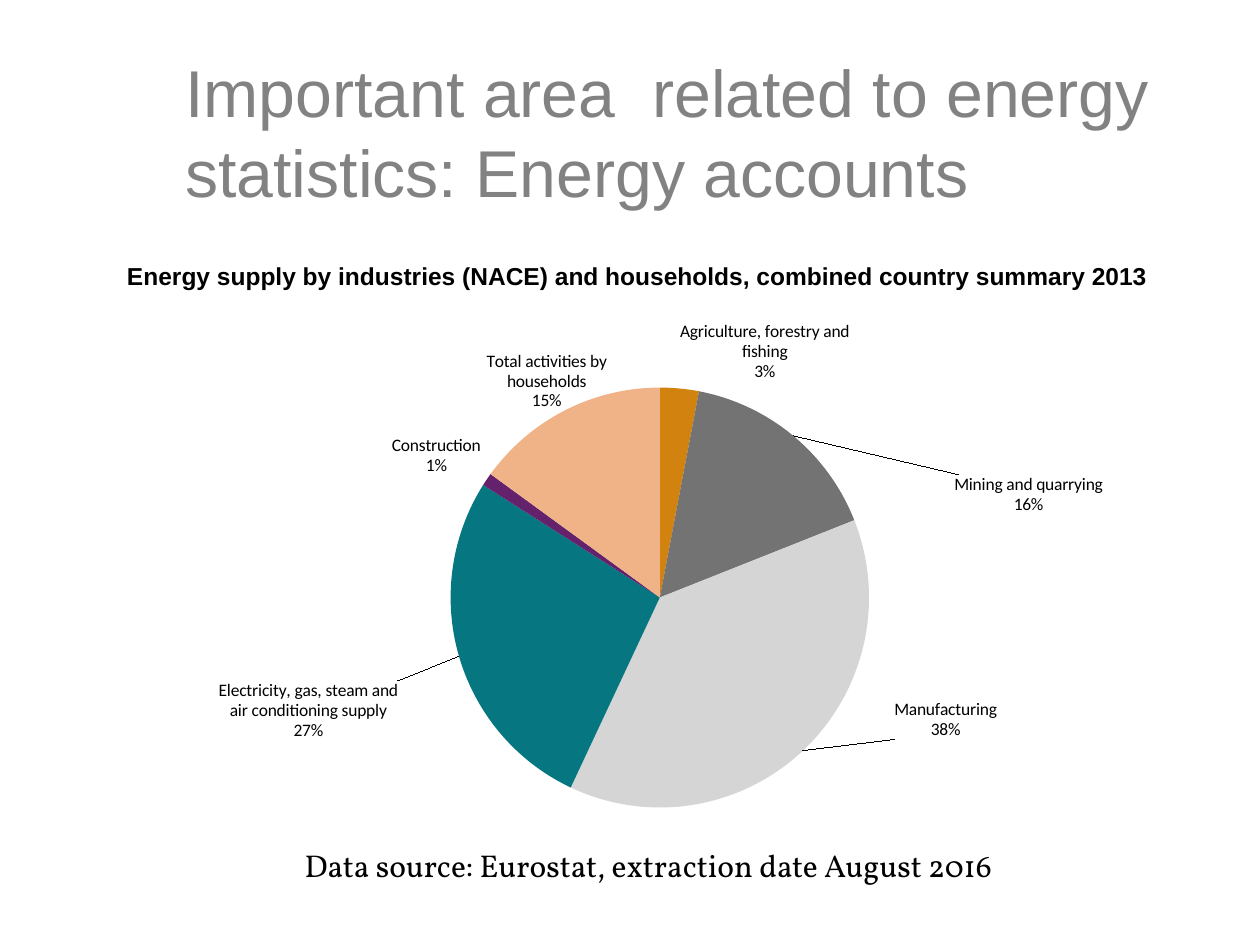
from pptx import Presentation
from pptx.chart.data import CategoryChartData
from pptx.dml.color import RGBColor
from pptx.enum.chart import XL_CHART_TYPE as ChartType, XL_LABEL_POSITION as LabelPosition
from pptx.enum.text import MSO_ANCHOR as Anchor, MSO_AUTO_SIZE as AutoSize, PP_ALIGN as Align
from pptx.oxml import parse_xml
from pptx.oxml.ns import nsdecls
from pptx.util import Pt

COLORS = {
    "title": "828282",
    "text": "000000",
    "agriculture": "D1820F",
    "mining": "737373",
    "manufacturing": "D5D5D5",
    "electricity": "067681",
    "water": "708327",
    "construction": "64226C",
    "households": "F0B388",
}

# category, share in percent, colour, label offset in points
SUPPLY = [
    ("Agriculture, forestry and fishing", 3, "agriculture", None),
    ("Mining and quarrying", 16, "mining", (92, 48)),
    ("Manufacturing", 38, "manufacturing", (49.5, -32)),
    ("Electricity, gas, steam and air conditioning supply", 27, "electricity", (-31, 13)),
    ("Water supply; sewerage, waste management and remediation activities", 0, "water",
     (-79, 15)),
    ("Construction", 1, "construction", None),
    ("Total activities by households", 15, "households", (26, 4)),
]
LABEL_SIZES = {"electricity": (93, 46)}
SEPARATOR = "<c:separator{}>\n</c:separator>"
C15 = "http://schemas.microsoft.com/office/drawing/2012/chart"


def color(name):
    return RGBColor.from_string(COLORS[name])


def set_values(target, **values):
    for name, value in values.items():
        setattr(target, name, value)


def set_font(font, ink="text", **values):
    set_values(font, **values)
    font.color.rgb = color(ink)


def manual_layout(**values):
    fields = "".join(f'<c:{name} val="{value}"/>' for name, value in values.items())
    return f'<c:manualLayout {nsdecls("c")}>{fields}</c:manualLayout>'


def moved_label(index, dx, dy, size=None):
    """Return a slice label shifted from its default place; lengths are chart fractions."""
    extension = ""
    if size:
        extension = (
            '<c:extLst><c:ext uri="{CE6537A1-D6FC-4f65-9D91-7224C49458BB}" '
            f'xmlns:c15="{C15}"><c15:layout>{manual_layout(w=size[0], h=size[1])}'
            "</c15:layout></c:ext></c:extLst>")
    return parse_xml(
        f'<c:dLbl {nsdecls("c")}><c:idx val="{index}"/>'
        f"<c:layout>{manual_layout(x=dx, y=dy)}</c:layout>"
        '<c:numFmt formatCode="0%" sourceLinked="0"/><c:dLblPos val="outEnd"/>'
        '<c:showLegendKey val="0"/><c:showVal val="0"/><c:showCatName val="1"/>'
        '<c:showSerName val="0"/><c:showPercent val="1"/><c:showBubbleSize val="0"/>'
        f'{SEPARATOR.format("")}{extension}</c:dLbl>')


def place_title(slide, left, top, width, height):
    title = slide.shapes.title
    set_values(title, left=Pt(left), top=Pt(top), width=Pt(width), height=Pt(height))
    frame = title.text_frame
    frame.text = "Important area  related to energy statistics: Energy accounts"
    set_values(frame, vertical_anchor=Anchor.MIDDLE, auto_size=AutoSize.NONE)
    heading = frame.paragraphs[0]
    heading.alignment = Align.LEFT
    set_font(heading.runs[0].font, "title", name="Arial", size=Pt(37.8))


def place_text(slide, text, left, top, width, height, wrap=True, **font_values):
    frame = slide.shapes.add_textbox(Pt(left), Pt(top), Pt(width), Pt(height)).text_frame
    frame.word_wrap = wrap
    frame.text = text
    set_font(frame.paragraphs[0].runs[0].font, **font_values)


def place_supply_pie(slide, left, top, width, height):
    data = CategoryChartData()
    data.categories = [category for category, *_ in SUPPLY]
    data.add_series("Series 1", [share for _, share, *_ in SUPPLY])
    chart = slide.shapes.add_chart(
        ChartType.PIE, Pt(left), Pt(top), Pt(width), Pt(height), data).chart
    chart.has_title = chart.has_legend = False
    set_font(chart.font, name="Calibri", size=Pt(10))

    pie = chart.plots[0]
    pie.vary_by_categories = True
    plot_area = chart.element.chart.plotArea
    for layout in plot_area.findall("{*}layout"):
        plot_area.remove(layout)
    circle = manual_layout(layoutTarget="inner", xMode="edge", yMode="edge",
                           x=159.5 / width, y=47.5 / height, w=240 / width, h=240 / height)
    plot_area.insert(0, parse_xml(f'<c:layout {nsdecls("c")}>{circle}</c:layout>'))

    supply = pie.series[0]
    labels = supply.data_labels
    set_values(labels, number_format="0%", number_format_is_linked=False,
               position=LabelPosition.OUTSIDE_END, show_value=False,
               show_category_name=True, show_percentage=True)
    set_font(labels.font, name="Calibri", size=Pt(10))
    label_xml = plot_area.find(".//{*}ser/{*}dLbls")
    label_xml.find("{*}showBubbleSize").addnext(
        parse_xml(SEPARATOR.format(" " + nsdecls("c"))))

    moved = []
    for index, (_, _, ink, offset) in enumerate(SUPPLY):
        piece = supply.points[index].format
        piece.fill.solid()
        piece.fill.fore_color.rgb = color(ink)
        piece.line.fill.background()
        if offset:
            size = LABEL_SIZES.get(ink)
            moved.append(moved_label(index, offset[0] / width, offset[1] / height,
                                     size and (size[0] / width, size[1] / height)))
    for position, label in enumerate(moved):
        label_xml.insert(position, label)


def main():
    deck = Presentation()
    deck.slide_width, deck.slide_height = Pt(720), Pt(540)
    slide = deck.slides.add_slide(deck.slide_layouts[5])
    place_title(slide, 98.8, 30, 585.4, 90)
    place_supply_pie(slide, 98.6, 174, 533.5, 306)
    place_text(slide, "Data source: Eurostat, extraction date August 2016",
               167, 480, 453.6, 29, name="Vollkorn", size=Pt(18))
    place_text(slide, "Energy supply by industries (NACE) and households, "
               "combined country summary 2013",
               65.5, 145.4, 599.8, 46, wrap=False, name="Arial", size=Pt(14), bold=True)
    deck.save("out.pptx")


if __name__ == "__main__":
    main()
